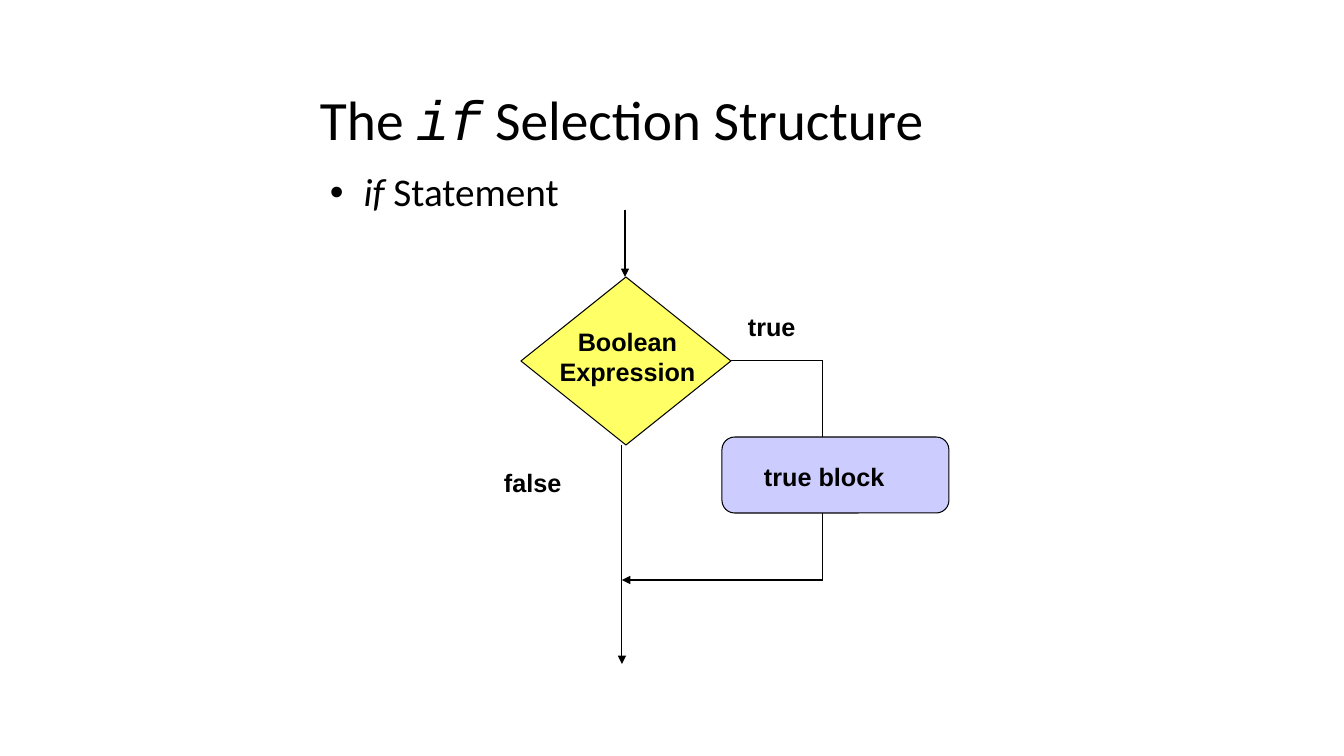
import pptx
import pptx.util
import pptx.dml.color
import pptx.enum.shapes
import pptx.enum.text
import pptx.oxml
import pptx.oxml.ns
from lxml import etree

PX = 12192000 / 1344
COLORS = {"ink": "000000", "decision": "FFFF66", "block": "CCCCFF"}
SHAPES = pptx.enum.shapes.MSO_SHAPE
ALIGN = pptx.enum.text.PP_ALIGN
ANCHOR = pptx.enum.text.MSO_ANCHOR


def emu(*lengths):
    return [round(n * PX) for n in lengths]


def rgb(name):
    return pptx.dml.color.RGBColor.from_string(COLORS[name])


def add_child(parent, tag, **attrs):
    child = etree.SubElement(parent, pptx.oxml.ns.qn(tag))
    for key, value in attrs.items():
        child.set(key, value)
    return child


def format_run(r, size, font, bold=False, italic=False):
    r.font.size = pptx.util.Pt(size)
    r.font.name = font
    r.font.bold = bold
    r.font.italic = italic
    r.font.color.rgb = rgb("ink")


def add_heading(s, box, parts, size, anchor):
    tf = s.shapes.add_textbox(*emu(*box)).text_frame
    tf.word_wrap = True
    tf.vertical_anchor = anchor
    p = tf.paragraphs[0]
    p.line_spacing = 0.9
    for text, font, italic in parts:
        r = p.add_run()
        r.text = text
        format_run(r, size, font, italic=italic)
    return p


def add_bullet(p, indent):
    pPr = p._p.get_or_add_pPr()
    pPr.set("marL", str(indent))
    pPr.set("indent", str(-indent))
    add_child(pPr, "a:buFont", typeface="Arial")
    add_child(pPr, "a:buChar", char="•")


def add_label(s, box, text, inset=(10, 5), wrap=True, align=ALIGN.LEFT):
    tf = s.shapes.add_textbox(*emu(*box)).text_frame
    tf.margin_left = tf.margin_right = emu(inset[0])[0]
    tf.margin_top = tf.margin_bottom = emu(inset[1])[0]
    tf.word_wrap = wrap
    tf.auto_size = pptx.enum.text.MSO_AUTO_SIZE.SHAPE_TO_FIT_TEXT
    tf.text = text
    for p in tf.paragraphs:
        p.alignment = align
        for r in p.runs:
            format_run(r, 18, "Arial", bold=True)


def add_node(s, kind, box, color):
    sp = s.shapes.add_shape(kind, *emu(*box))
    sp.shadow.inherit = False
    sp.fill.solid()
    sp.fill.fore_color.rgb = rgb(color)
    sp.line.color.rgb = rgb("ink")
    sp.line.width = pptx.util.Pt(0.75)


def add_line(s, start, end, arrow=False):
    sp = s.shapes.add_connector(
        pptx.enum.shapes.MSO_CONNECTOR.STRAIGHT, *emu(*start, *end))
    sp.line.color.rgb = rgb("ink")
    sp.line.width = pptx.util.Pt(0.75)
    if arrow:
        add_child(sp.line._get_or_add_ln(), "a:tailEnd", type="triangle")
    add_child(sp._element.spPr, "a:effectLst")


def main():
    prs = pptx.Presentation()
    prs.slide_width, prs.slide_height = emu(1344, 756)
    s = prs.slides.add_slide(prs.slide_layouts[6])

    add_heading(s, (310, 84, 780, 77), [
        ("The ", "Calibri", False),
        ("if", "Courier New", True),
        (" Selection Structure", "Calibri", False),
    ], 39.6, ANCHOR.MIDDLE)
    p = add_heading(s, (320, 168, 310, 563), [
        (" ", "Calibri", False),
        ("if", "Calibri", True),
        (" Statement", "Calibri", False),
    ], 28, ANCHOR.TOP)
    p.space_before = pptx.util.Pt(10)
    add_bullet(p, emu(25)[0])

    add_node(s, SHAPES.DIAMOND, (521, 277, 210, 168), "decision")
    add_node(s, SHAPES.ROUNDED_RECTANGLE, (722, 437, 227, 76), "block")

    add_label(s, (549, 321, 157, 71), "Boolean\nExpression",
              wrap=False, align=ALIGN.CENTER)
    add_label(s, (754, 456, 142, 40), "true block", wrap=False)
    add_label(s, (748, 311, 67, 30), "true", inset=(0, 0))
    add_label(s, (504, 462, 84, 40), "false", inset=(0, 5))

    main_x, branch_x, merge_y = 622, 823, 580
    add_line(s, (625, 210), (625, 277), arrow=True)
    add_line(s, (main_x, 445), (main_x, 664), arrow=True)
    add_line(s, (branch_x, 361), (731, 361))
    add_line(s, (branch_x, 361), (branch_x, 437))
    add_line(s, (branch_x, 513), (branch_x, merge_y))
    add_line(s, (branch_x, merge_y), (main_x, merge_y), arrow=True)

    prs.save("out.pptx")


if __name__ == "__main__":
    main()
